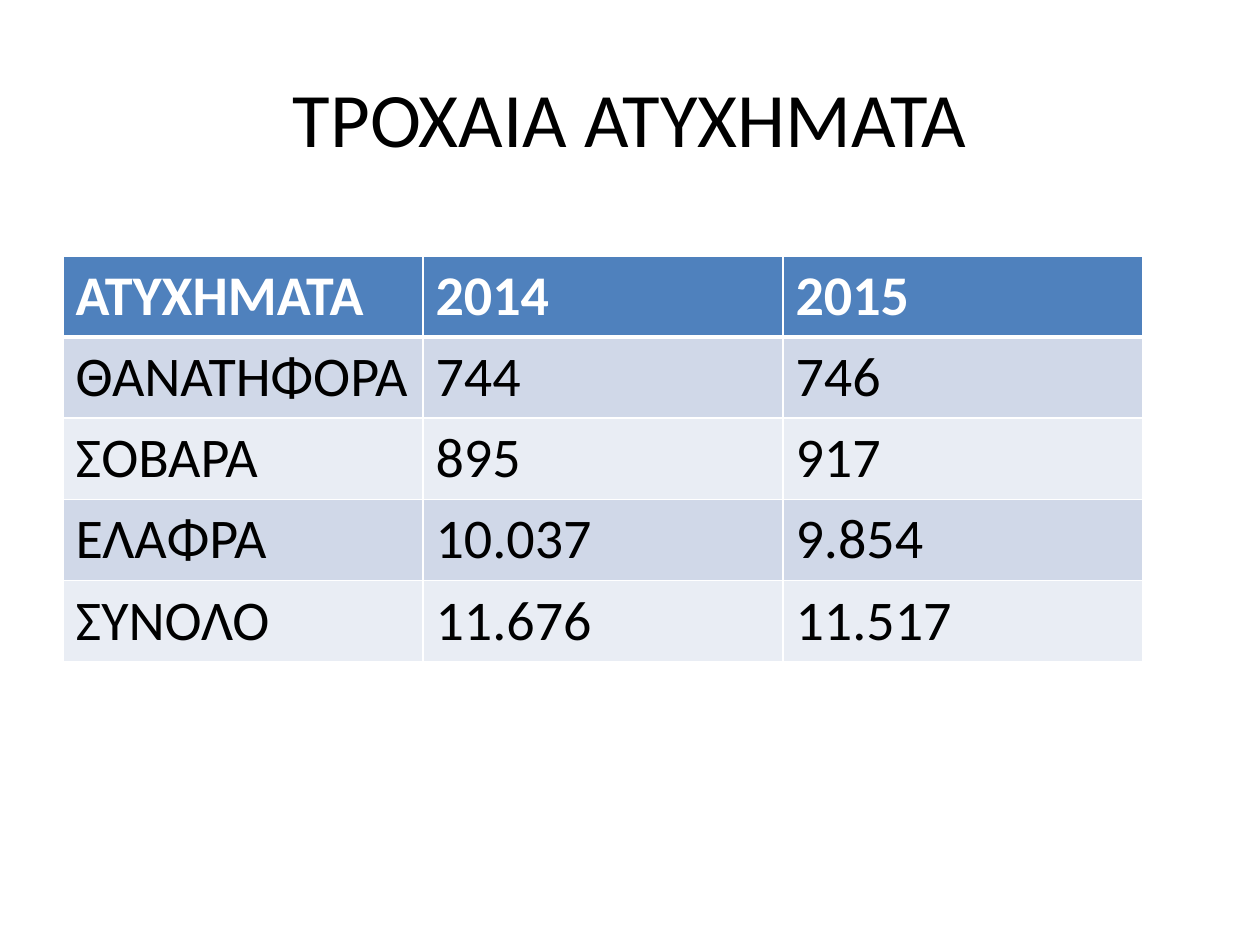
from dataclasses import dataclass

from pptx import Presentation
from pptx import util as u
from pptx.dml.color import RGBColor
from pptx.enum import text
from pptx.oxml.ns import qn
from lxml import etree


@dataclass(frozen=True)
class Theme:
    font: str = "Calibri"
    ink: str = "000000"
    paper: str = "FFFFFF"
    header: str = "4F81BD"
    bands: tuple = ("D0D8E8", "E9EDF4")
    title_size: int = 44
    table_size: int = 32
    rule: int = 1
    header_rule: int = 3


theme = Theme()


def px(length):
    return u.Emu(round(length * 914400 / 126))


def write(paragraph, wording, size, color, bold=False):
    run = paragraph.add_run()
    run.text = wording
    run.font.name = theme.font
    run.font.size = u.Pt(size)
    run.font.bold = bold
    run.font.color.rgb = RGBColor.from_string(color)


presentation = Presentation()
presentation.slide_width = px(1260)
presentation.slide_height = px(945)
slide = presentation.slides.add_slide(presentation.slide_layouts[5])

title = slide.shapes.title
title.left, title.top, title.width, title.height = px(63), px(38), px(1134), px(157)
title.text_frame.vertical_anchor = text.MSO_ANCHOR.MIDDLE
heading = title.text_frame.paragraphs[0]
heading.alignment = text.PP_ALIGN.CENTER
write(heading, "ΤΡΟΧΑΙΑ ΑΤΥΧΗΜΑΤΑ", theme.title_size, theme.ink)

accidents = [
    ("ΑΤΥΧΗΜΑΤΑ", "2014", "2015"),
    ("ΘΑΝΑΤΗΦΟΡΑ", "744", "746"),
    ("ΣΟΒΑΡΑ", "895", "917"),
    ("ΕΛΑΦΡΑ", "10.037", "9.854"),
    ("ΣΥΝΟΛΟ", "11.676", "11.517"),
]
column_width, row_height = 360, 81
row_count, column_count = len(accidents), len(accidents[0])
table = slide.shapes.add_table(
    row_count, column_count, px(63), px(256),
    px(column_width * column_count), px(row_height * row_count),
).table

for row_index, row in enumerate(accidents):
    is_header = row_index == 0
    fill_color = theme.header if is_header else theme.bands[(row_index - 1) % 2]
    text_color = theme.paper if is_header else theme.ink
    top_rule = theme.header_rule if row_index == 1 else theme.rule
    bottom_rule = theme.header_rule if is_header else theme.rule
    rules = {"a:lnL": theme.rule, "a:lnR": theme.rule, "a:lnT": top_rule, "a:lnB": bottom_rule}
    for column_index, wording in enumerate(row):
        cell = table.cell(row_index, column_index)
        write(cell.text_frame.paragraphs[0], wording, theme.table_size, text_color, is_header)
        properties = cell._tc.get_or_add_tcPr()
        for tag, width in rules.items():
            line = etree.SubElement(properties, qn(tag), w=str(u.Pt(width)))
            line_fill = etree.SubElement(line, qn("a:solidFill"))
            etree.SubElement(line_fill, qn("a:srgbClr"), val=theme.paper)
        cell.fill.solid()
        cell.fill.fore_color.rgb = RGBColor.from_string(fill_color)

presentation.save("out.pptx")
